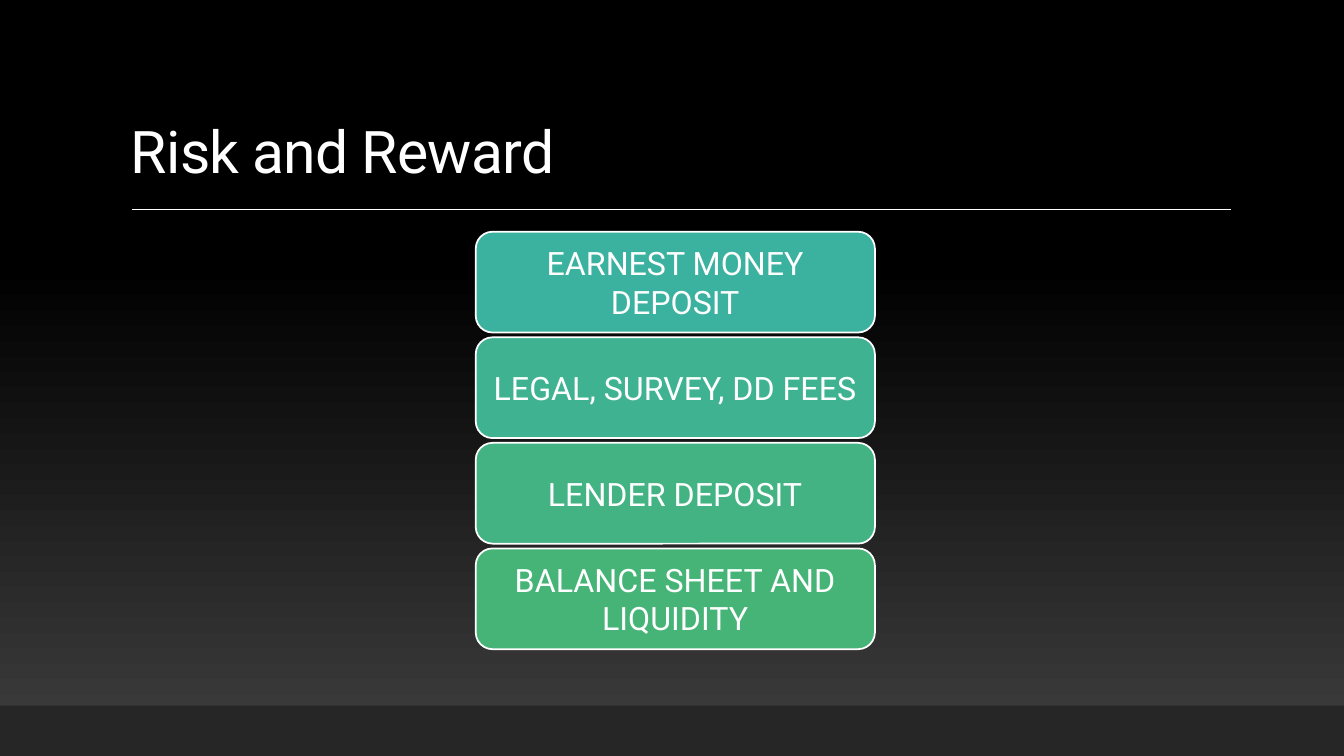
from pptx import Presentation, util as u
from pptx.dml import color
from pptx.enum import shapes, text
from pptx.oxml import xmlchemy

WIDTH, HEIGHT = 33.87, 19.05
RISKS = [
    ("EARNEST MONEY DEPOSIT", "3BB1A0"),
    ("LEGAL, SURVEY, DD FEES", "3FB292"),
    ("LENDER DEPOSIT", "43B384"),
    ("BALANCE SHEET AND LIQUIDITY", "47B477"),
]


def rgb(value):
    """Turn a hex string into a colour."""
    return color.RGBColor.from_string(value)


def apply(target, formats):
    """Set each attribute of the target from a dict of values."""
    for name, value in formats.items():
        setattr(target, name, value)


def write(shape, words, size, frame_format, paragraph_format):
    """Put one white paragraph in a shape and return its run."""
    apply(shape.text_frame, {"word_wrap": True, **frame_format})
    paragraph = shape.text_frame.paragraphs[0]
    apply(paragraph, paragraph_format)
    run = paragraph.add_run()
    run.text = words
    apply(run.font, {"name": "Roboto", "size": u.Pt(size)})
    run.font.color.rgb = rgb("FFFFFF")
    return run


def add_box(slide, kind, box, fill):
    """Add a filled shape without shadow or outline."""
    shape = slide.shapes.add_shape(kind, *map(u.Cm, box))
    shape.shadow.inherit = False
    shape.fill.solid()
    shape.fill.fore_color.rgb = rgb(fill)
    shape.line.fill.background()
    return shape


def paint_background(slide):
    """Fade the slide from grey at the bottom to black."""
    fill = slide.background.fill
    fill.gradient()
    fill.gradient_angle = 90
    for stop, (position, value) in zip(fill.gradient_stops, [(0, "3F3F3F"), (0.65, "000000")]):
        stop.position = position
        stop.color.rgb = rgb(value)


def add_heading(slide, words, left, top, width, height):
    """Place the title in its box with a rule below it."""
    title = slide.shapes.add_textbox(*map(u.Cm, (left, top, width, height)))
    run = write(title, words, 42, {"vertical_anchor": text.MSO_ANCHOR.BOTTOM},
                {"line_spacing": 0.9})
    run.font._element.set("spc", "-50")
    rule_left, rule_top = left + 0.28, top + height + 0.45
    rule = slide.shapes.add_connector(
        shapes.MSO_CONNECTOR.STRAIGHT,
        *map(u.Cm, (rule_left, rule_top, rule_left + 27.68, rule_top)))
    rule.line.width = u.Pt(1)
    rule.line.color.rgb = rgb("FFFFFF")
    rule._element.spPr.append(xmlchemy.OxmlElement("a:effectLst"))


def add_risks(slide, risks, left, top, width, height, gap=0.12):
    """Stack one rounded box per risk in the given box."""
    box_height = (height - gap * (len(risks) - 1)) / len(risks)
    for index, (words, fill) in enumerate(risks):
        box_top = top + index * (box_height + gap)
        shape = add_box(slide, shapes.MSO_SHAPE.ROUNDED_RECTANGLE,
                        (left, box_top, width, box_height), fill)
        shape.line.width = u.Pt(1.25)
        shape.line.color.rgb = rgb("FFFFFF")
        write(shape, words, 23, {"vertical_anchor": text.MSO_ANCHOR.MIDDLE},
              {"alignment": text.PP_ALIGN.CENTER})


def main():
    """Build and save the slide."""
    presentation = Presentation()
    apply(presentation, {"slide_width": u.Cm(WIDTH), "slide_height": u.Cm(HEIGHT)})
    slide = presentation.slides.add_slide(presentation.slide_layouts[6])
    paint_background(slide)
    add_box(slide, shapes.MSO_SHAPE.RECTANGLE, (0, HEIGHT - 1.27, WIDTH, 1.27), "262626")
    add_heading(slide, "Risk and Reward", 3.05, 0.79, 27.94, 4.04)
    add_risks(slide, RISKS, 11.99, 5.84, 10.06, 10.52)
    presentation.save("out.pptx")


if __name__ == "__main__":
    main()
